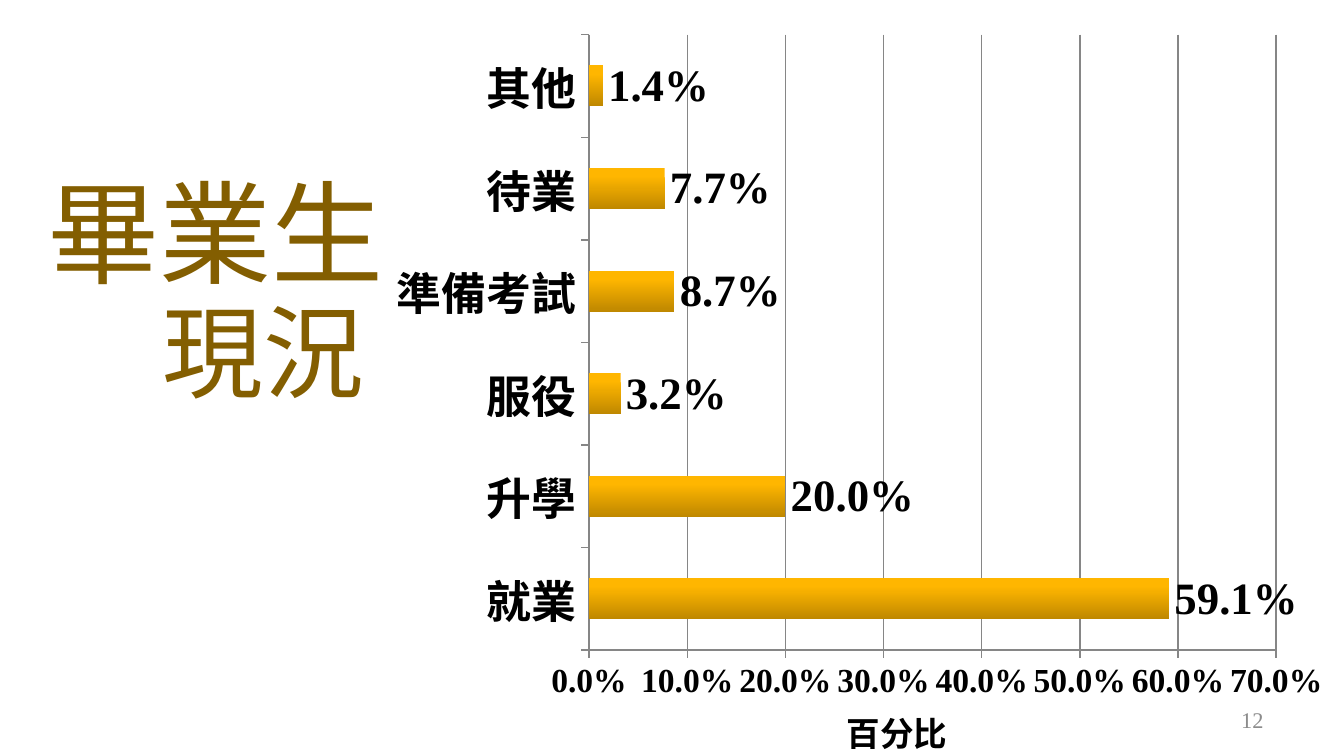
from lxml import etree
from pptx import Presentation
from pptx import util as u
from pptx.chart import data as cd
from pptx.dml import color
from pptx.enum import chart as ce, text
from pptx.oxml import ns

BROWN = color.RGBColor(0x83, 0x5E, 0x01)
GRAY = color.RGBColor(0x8C, 0x8C, 0x8C)
LINE = color.RGBColor(0x86, 0x86, 0x86)
BLACK = color.RGBColor(0, 0, 0)
GOLD = color.RGBColor(0xFF, 0xB6, 0x00)
DARK_GOLD = color.RGBColor(0xBF, 0x88, 0x00)

SANS = "Noto Sans CJK JP"
SERIF = "Times New Roman"

STATUS = {"就業": 0.591, "升學": 0.2, "服役": 0.032,
          "準備考試": 0.087, "待業": 0.077, "其他": 0.014}


class Deck:
    """Holds the presentation, its text style and the current slide."""

    def __init__(self, width, height):
        self.prs = Presentation()
        self.prs.slide_width, self.prs.slide_height = u.Cm(width), u.Cm(height)
        self.s = self.prs.slides.add_slide(self.prs.slide_layouts[5])

    def font(self, font, rgb, **fmt):
        for key, value in fmt.items():
            setattr(font, key, value)
        font.color.rgb = rgb

    def set_text(self, sp, words, rgb, size, name, align, wrap=True):
        tf = sp.text_frame
        frame = {"word_wrap": wrap, "auto_size": text.MSO_AUTO_SIZE.NONE,
                 "vertical_anchor": text.MSO_ANCHOR.MIDDLE}
        for key, value in frame.items():
            setattr(tf, key, value)
        p = tf.paragraphs[0]
        p.alignment = align
        r = p.add_run()
        r.text = words
        self.font(r.font, rgb, size=u.Pt(size), name=name)
        etree.SubElement(r.font._element, ns.qn("a:ea"), typeface=name)

    def title(self, box, words, **style):
        sp = self.s.shapes.title
        for key, value in zip(("left", "top", "width", "height"), box):
            setattr(sp, key, u.Cm(value))
        self.set_text(sp, words, **style)

    def label(self, box, words, **style):
        self.set_text(self.s.shapes.add_textbox(*map(u.Cm, box)), words, **style)

    def place(self, element, **parts):
        """Give a chart part a manual layout, as fractions of the chart."""
        layout = element.find(ns.qn("c:layout"))
        if layout is None:
            layout = etree.Element(ns.qn("c:layout"))
            tx = element.find(ns.qn("c:tx"))
            if tx is None:
                element.insert(0, layout)
            else:
                tx.addnext(layout)
        manual = etree.SubElement(layout, ns.qn("c:manualLayout"))
        for key, value in parts.items():
            etree.SubElement(manual, ns.qn("c:" + key), val=str(value))

    def bar_chart(self, box, values, axis_title):
        data = cd.CategoryChartData(number_format="0.0%")
        data.categories = list(values)
        data.add_series("Series 1", list(values.values()))
        chart = self.s.shapes.add_chart(
            ce.XL_CHART_TYPE.BAR_CLUSTERED, *map(u.Cm, box), data).chart
        chart.has_legend = chart.has_title = False
        self.font(chart.font, BLACK, size=u.Pt(18), name=SERIF)
        self.place(chart._chartSpace.chart.plotArea, layoutTarget="inner",
                   xMode="edge", yMode="edge", x=0.22, y=0.02, w=0.71, h=0.78)

        # Bars with a vertical gradient
        plot = chart.plots[0]
        plot.gap_width, plot.vary_by_categories = 150, False
        fill = plot.series[0].format.fill
        fill.gradient()
        fill.gradient_angle = 270
        for stop, rgb, pos in zip(fill.gradient_stops, (GOLD, DARK_GOLD), (0.2, 1)):
            stop.color.rgb, stop.position = rgb, pos

        # Value labels
        plot.has_data_labels = True
        fmt = {"show_value": True, "number_format": "0.0%",
               "number_format_is_linked": False,
               "position": ce.XL_LABEL_POSITION.OUTSIDE_END}
        for key, value in fmt.items():
            setattr(plot.data_labels, key, value)
        self.font(plot.data_labels.font, BLACK, size=u.Pt(24), bold=True, name=SERIF)

        # Axes
        cat, val = chart.category_axis, chart.value_axis
        for axis, size in ((cat, 24), (val, 18)):
            axis.major_tick_mark = ce.XL_TICK_MARK.OUTSIDE
            axis.format.line.color.rgb = LINE
            self.font(axis.tick_labels.font, BLACK, size=u.Pt(size), bold=True, name=SERIF)
        val.minimum_scale, val.maximum_scale, val.major_unit = 0, 0.7, 0.1
        val.has_major_gridlines = True
        val.major_gridlines.format.line.color.rgb = LINE
        val.tick_labels.number_format = "0.0%"
        val.tick_labels.number_format_is_linked = False

        # Value axis title
        p = val.axis_title.text_frame.paragraphs[0]
        r = p.add_run()
        r.text = axis_title
        self.font(r.font, BLACK, size=u.Pt(18), bold=True, name=SERIF)
        self.place(val.axis_title._element, xMode="edge", yMode="edge", x=0.48, y=0.86)


def main():
    deck = Deck(25.4, 14.29)

    # Graduate status chart
    deck.bar_chart((7.11, 0.36, 18.29, 14.91), STATUS, "百分比")

    # Two-line heading
    deck.title((-0.2, 2.95, 7.7, 2.82), "畢業生", rgb=BROWN, size=60, name=SANS,
               align=text.PP_ALIGN.RIGHT)
    deck.label((2.82, 5.33, 4.37, 2.57), "現況", rgb=BROWN, size=54, name=SANS,
               align=text.PP_ALIGN.LEFT, wrap=False)

    # Page number
    deck.label((18.21, 13.23, 5.92, 0.76), "12", rgb=GRAY, size=12, name=SERIF,
               align=text.PP_ALIGN.RIGHT)

    deck.prs.save("out.pptx")


if __name__ == "__main__":
    main()
